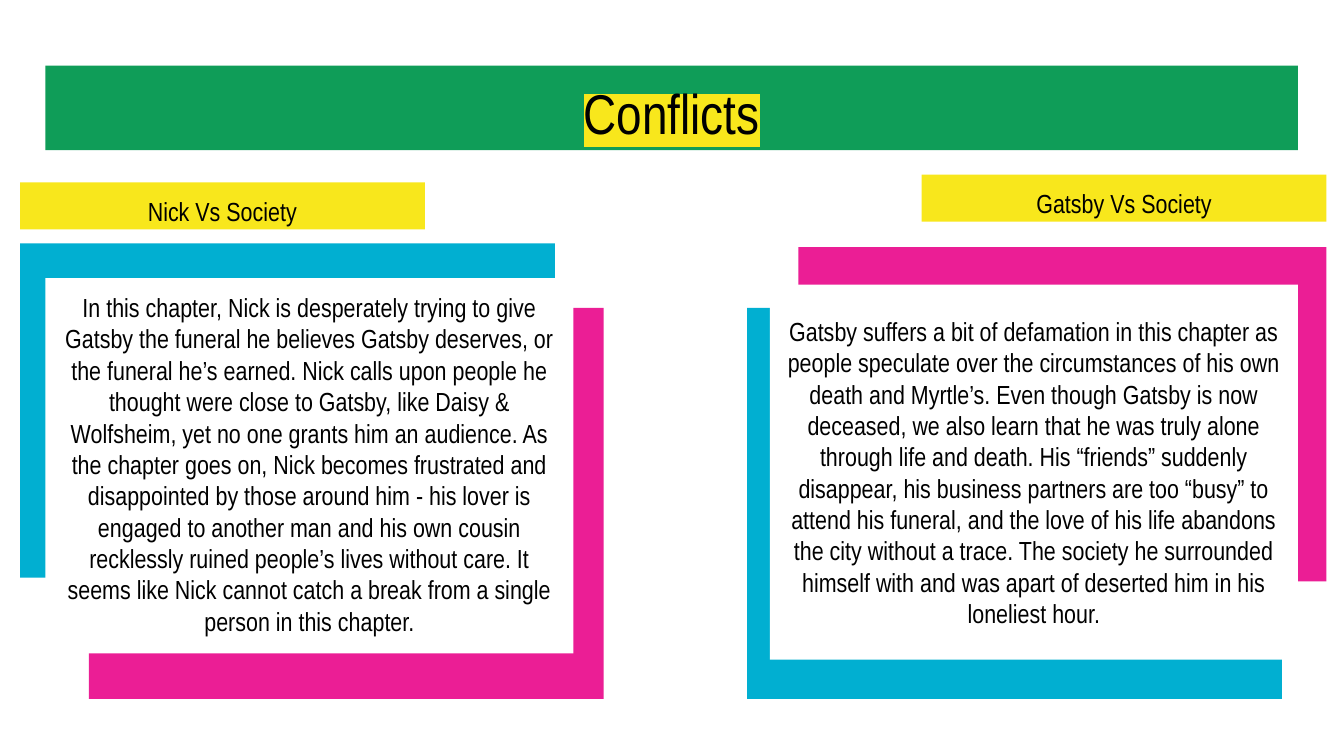
"""Build the Conflicts slide: a title banner and two framed text columns."""
from lxml.etree import Element, SubElement
from pptx import Presentation
from pptx.dml.color import RGBColor
from pptx.enum.shapes import MSO_SHAPE
from pptx.enum.text import MSO_ANCHOR, PP_ALIGN
from pptx.oxml.ns import qn
from pptx.util import Cm, Pt

COLOURS = {
    "green": "0F9D58", "yellow": "F8E71C", "pink": "EB1E95",
    "blue": "01AFD1", "white": "FFFFFF", "black": "000000",
}
FONT = "Arial Narrow"
SLIDE_SIZE = (25.4, 14.29)
LABEL_SIZE = (7.65, 0.89)
PANEL_SIZE = (9.98, 7.09)
INSET = 0.25

TITLE = {"text": "Conflicts", "size": 30, "highlight": "yellow"}
NICK_TEXT = (
    "In this chapter, Nick is desperately trying to give Gatsby the funeral he "
    "believes Gatsby deserves, or the funeral he’s earned. Nick calls upon people "
    "he thought were close to Gatsby, like Daisy & Wolfsheim, yet no one grants "
    "him an audience. As the chapter goes on, Nick becomes frustrated and "
    "disappointed by those around him - his lover is engaged to another man and "
    "his own cousin recklessly ruined people’s lives without care. It seems like "
    "Nick cannot catch a break from a single person in this chapter."
)
GATSBY_TEXT = (
    "Gatsby suffers a bit of defamation in this chapter as people speculate over "
    "the circumstances of his own death and Myrtle’s. Even though Gatsby is now "
    "deceased, we also learn that he was truly alone through life and death. His "
    "“friends” suddenly disappear, his business partners are too “busy” to attend "
    "his funeral, and the love of his life abandons the city without a trace. The "
    "society he surrounded himself with and was apart of deserted him in his "
    "loneliest hour."
)
COLUMNS = [
    {
        "label": ("Nick Vs Society", (0.38, 3.45)),
        "frames": [("blue", (0.38, 4.6), (10.11, 6.32)),
                   ("pink", (1.68, 5.82), (9.73, 7.39))],
        "panel": (NICK_TEXT, (0.86, 5.26), MSO_ANCHOR.TOP),
    },
    {
        "label": ("Gatsby Vs Society", (17.42, 3.3)),
        "frames": [("pink", (15.09, 4.67), (9.98, 6.32)),
                   ("blue", (14.12, 5.82), (10.11, 7.39))],
        "panel": (GATSBY_TEXT, (14.55, 5.38), MSO_ANCHOR.MIDDLE),
    },
]


def add_box(page, colour, corner, size):
    box = page.shapes.add_shape(
        MSO_SHAPE.RECTANGLE, *(Cm(length) for length in corner + size))
    box.shadow.inherit = False
    box.fill.solid()
    box.fill.fore_color.rgb = RGBColor.from_string(COLOURS[colour])
    box.line.fill.background()
    return box


def write(box, text, size=14, anchor=MSO_ANCHOR.TOP, highlight=None):
    frame = box.text_frame
    frame_format = {"word_wrap": True, "vertical_anchor": anchor}
    for side in ("left", "top", "right", "bottom"):
        frame_format[f"margin_{side}"] = Cm(INSET)
    for name, value in frame_format.items():
        setattr(frame, name, value)
    paragraph = frame.paragraphs[0]
    paragraph.alignment = PP_ALIGN.CENTER
    span = paragraph.add_run()
    span.text = text
    for name, value in {"name": FONT, "size": Pt(size)}.items():
        setattr(span.font, name, value)
    span.font.color.rgb = RGBColor.from_string(COLOURS["black"])
    if highlight:
        marker = Element(qn("a:highlight"))
        SubElement(marker, qn("a:srgbClr"), val=COLOURS[highlight])
        span.font._element.find(qn("a:solidFill")).addnext(marker)


def main():
    deck = Presentation()
    deck.slide_width, deck.slide_height = (Cm(length) for length in SLIDE_SIZE)
    page = deck.slides.add_slide(deck.slide_layouts[6])
    write(add_box(page, "green", (0.86, 1.24), (23.67, 1.6)), **TITLE)
    for column in COLUMNS:
        text, corner = column["label"]
        write(add_box(page, "yellow", corner, LABEL_SIZE), text)
        for colour, corner, size in column["frames"]:
            add_box(page, colour, corner, size)
        text, corner, anchor = column["panel"]
        write(add_box(page, "white", corner, PANEL_SIZE), text, anchor=anchor)
    deck.save("out.pptx")


if __name__ == "__main__":
    main()
